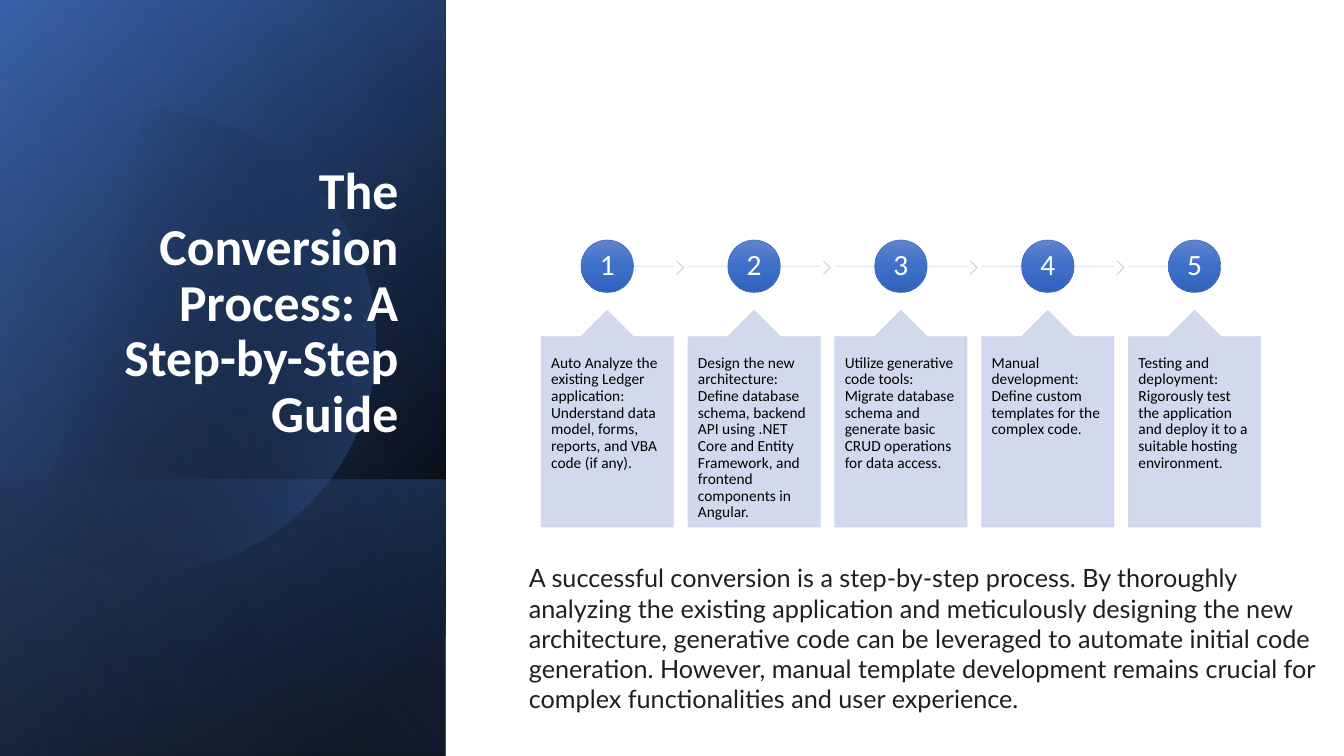
from math import cos, radians, sin

from pptx import Presentation
from pptx.dml.color import RGBColor
from pptx.enum.shapes import MSO_CONNECTOR, MSO_SHAPE
from pptx.enum.text import MSO_ANCHOR, MSO_AUTO_SIZE, PP_ALIGN
from pptx.oxml import parse_xml
from pptx.oxml.ns import nsdecls, qn
from pptx.util import Cm, Pt

RECT, OVAL = MSO_SHAPE.RECTANGLE, MSO_SHAPE.OVAL
CHEVRON, CALLOUT = MSO_SHAPE.CHEVRON, MSO_SHAPE.UP_ARROW_CALLOUT
STRAIGHT = MSO_CONNECTOR.STRAIGHT
LEFT, CENTER, RIGHT = PP_ALIGN.LEFT, PP_ALIGN.CENTER, PP_ALIGN.RIGHT
TOP, MIDDLE, BOTTOM = MSO_ANCHOR.TOP, MSO_ANCHOR.MIDDLE, MSO_ANCHOR.BOTTOM
NO_FIT = MSO_AUTO_SIZE.NONE

BLACK = RGBColor(0x00, 0x00, 0x00)
WHITE = RGBColor(0xFF, 0xFF, 0xFF)
INK = RGBColor(0x1F, 0x1F, 0x1F)
BLUE = RGBColor(0x44, 0x72, 0xC4)
NAVY = RGBColor(0x2F, 0x55, 0x97)
SKY = RGBColor(0x8F, 0xAA, 0xDC)
PALE = RGBColor(0xCF, 0xD5, 0xEA)
BALL = [(0, RGBColor(0x61, 0x83, 0xCB), 100), (50, RGBColor(0x3E, 0x70, 0xCA), 100),
        (100, RGBColor(0x30, 0x62, 0xBB), 100)]

SIDE = 11.23                      # width of the dark panel
FIRST, PITCH, CARD = 13.64, 3.7, 3.33
AXIS, DISC = 6.71, 1.32           # line through the numbers, their diameter

TITLE = "The Conversion Process: A Step-by-Step Guide"
STEPS = [
    "Auto Analyze the existing Ledger application: Understand data model, forms, "
    "reports, and VBA code (if any).",
    "Design the new architecture: Define database schema, backend API using .NET Core "
    "and Entity Framework, and frontend components in Angular.",
    "Utilize generative code tools: Migrate database schema and generate basic CRUD "
    "operations for data access.",
    "Manual development: Define custom templates for the complex code.",
    "Testing and deployment: Rigorously test the application and deploy it to a "
    "suitable hosting environment.",
]
CLOSING = (
    "A successful conversion is a step-by-step process. By thoroughly analyzing the "
    "existing application and meticulously designing the new architecture, generative "
    "code can be leveraged to automate initial code generation. However, manual template "
    "development remains crucial for complex functionalities and user experience."
)


class Deck:
    """Draws on one slide in one style; lengths are centimetres."""

    def __init__(self, slide, font="Calibri"):
        self.slide = slide
        self.shapes = slide.shapes
        self.font = font

    def label(self, shape, text, size, color, align=LEFT, anchor=TOP,
              inset=(0.25, 0.13), space=0.9, bold=False, font=None):
        frame = shape.text_frame
        frame.text = text
        frame.word_wrap = True
        frame.auto_size = NO_FIT
        frame.vertical_anchor = anchor
        frame.margin_left = frame.margin_right = Cm(inset[0])
        frame.margin_top = frame.margin_bottom = Cm(inset[1])
        para = frame.paragraphs[0]
        para.alignment = align
        para.line_spacing = space
        style = para.runs[0].font
        style.name, style.size, style.bold = font or self.font, Pt(size), bold
        style.color.rgb = color

    def title(self, text, x, y, w, h):
        shape = self.shapes.title
        shape.left, shape.top, shape.width, shape.height = Cm(x), Cm(y), Cm(w), Cm(h)
        self.label(shape, text, 37, WHITE, RIGHT, BOTTOM, bold=True)
        self.shapes._spTree.append(shape._element)

    def note(self, text, x, y, w, h):
        box = self.shapes.add_textbox(Cm(x), Cm(y), Cm(w), Cm(h))
        self.label(box, text, 18, INK, space=1.0, font="Lato")

    def shade(self, shape, angle, stops):
        """Fill with a linear gradient of (position, colour, opacity) stops."""
        marks = "".join(
            f'<a:gs pos="{pos * 1000}"><a:srgbClr val="{color}">'
            f'<a:alpha val="{alpha * 1000}"/></a:srgbClr></a:gs>'
            for pos, color, alpha in stops)
        shape.fill.background()
        props = shape._element.spPr
        props.replace(props.find(qn("a:noFill")), parse_xml(
            f'<a:gradFill {nsdecls("a")} rotWithShape="1"><a:gsLst>{marks}</a:gsLst>'
            f'<a:lin ang="{angle * 60000}" scaled="0"/></a:gradFill>'))

    def shape(self, kind, x, y, w, h):
        shape = self.shapes.add_shape(kind, Cm(x), Cm(y), Cm(w), Cm(h))
        shape.shadow.inherit = False
        return shape

    def panel(self, top, high, angle, stops):
        """Dark band on the left, turned a quarter and mirrored."""
        band = self.shape(RECT, (SIDE - high) / 2, top + (high - SIDE) / 2, high, SIDE)
        band.rotation = 90
        band._element.spPr.xfrm.set("flipH", "1")
        band.line.fill.background()
        self.shade(band, angle, stops)

    def glow(self, x, y, r, angle, stops):
        """Circle cut off by the slide's left edge."""
        dots = [(Cm(x + r * cos(radians(a))), Cm(y + r * sin(radians(a))))
                for a in range(-128, 129, 2)]
        curve = self.shapes.build_freeform(*dots[0])
        curve.add_line_segments(dots[1:], close=True)
        disc = curve.convert_to_shape()
        disc.shadow.inherit = False
        disc.line.fill.background()
        self.shade(disc, angle, stops)

    def fade(self, part):
        for color in part._element.spPr.iter(qn("a:srgbClr")):
            color.append(parse_xml(f'<a:alpha {nsdecls("a")} val="90000"/>'))

    def pale(self, kind, x, y, w, h, *adjust):
        shape = self.shape(kind, x, y, w, h)
        for i, value in enumerate(adjust):
            shape.adjustments[i] = value
        shape.fill.solid()
        shape.fill.fore_color.rgb = PALE
        shape.line.color.rgb = PALE
        shape.line.width = Pt(0.5)
        self.fade(shape)
        return shape

    def line(self, x, end, y):
        line = self.shapes.add_connector(STRAIGHT, Cm(x), Cm(y), Cm(end), Cm(y))
        line.line.color.rgb = PALE
        line.line.width = Pt(0.5)
        self.fade(line)
        line._element.spPr.append(parse_xml(f'<a:effectLst {nsdecls("a")}/>'))

    def step(self, i, text, last):
        x = FIRST + i * PITCH
        mid = x + CARD / 2
        self.line(x if i else mid, mid if last else x + CARD, AXIS)
        if not last:
            self.pale(CHEVRON, x + 3.41, AXIS - 0.13, 0.18, 0.33, 0.9)
        disc = self.shape(OVAL, mid - DISC / 2, AXIS - DISC / 2, DISC, DISC)
        self.shade(disc, 90, BALL)
        disc.line.color.rgb = BLUE
        disc.line.width = Pt(0.5)
        self.label(disc, str(i + 1), 21, WHITE, CENTER, MIDDLE, (0.04, 0.04))
        card = self.pale(CALLOUT, x, 7.82, CARD, 5.46, 0.5, 0.2, 0.2, 0.88)
        self.label(card, text, 11, BLACK, inset=(0.25, 0.46))


def main():
    prs = Presentation()
    prs.slide_width, prs.slide_height = Cm(33.87), Cm(19.05)
    deck = Deck(prs.slides.add_slide(prs.slide_layouts[5]))
    deck.panel(0, 19.05, 50, [(8, BLACK, 100), (100, NAVY, 100)])
    deck.panel(0, 19.05, 30, [(0, BLACK, 0), (99, BLUE, 46)])
    deck.panel(12.09, 6.96, 130, [(2, BLUE, 29), (100, BLACK, 30)])
    deck.glow(3.61, 8.59, 5.84, 14, [(29, BLACK, 0), (100, BLUE, 43)])
    deck.panel(0, 19.05, 120, [(0, BLACK, 0), (99, SKY, 11)])
    deck.title(TITLE, 1.63, 4.67, 8.66, 6.65)
    for i, text in enumerate(STEPS):
        deck.step(i, text, i == len(STEPS) - 1)
    deck.note(CLOSING, 13.08, 14.05, 20.45, 4.11)
    prs.save("out.pptx")


if __name__ == "__main__":
    main()
